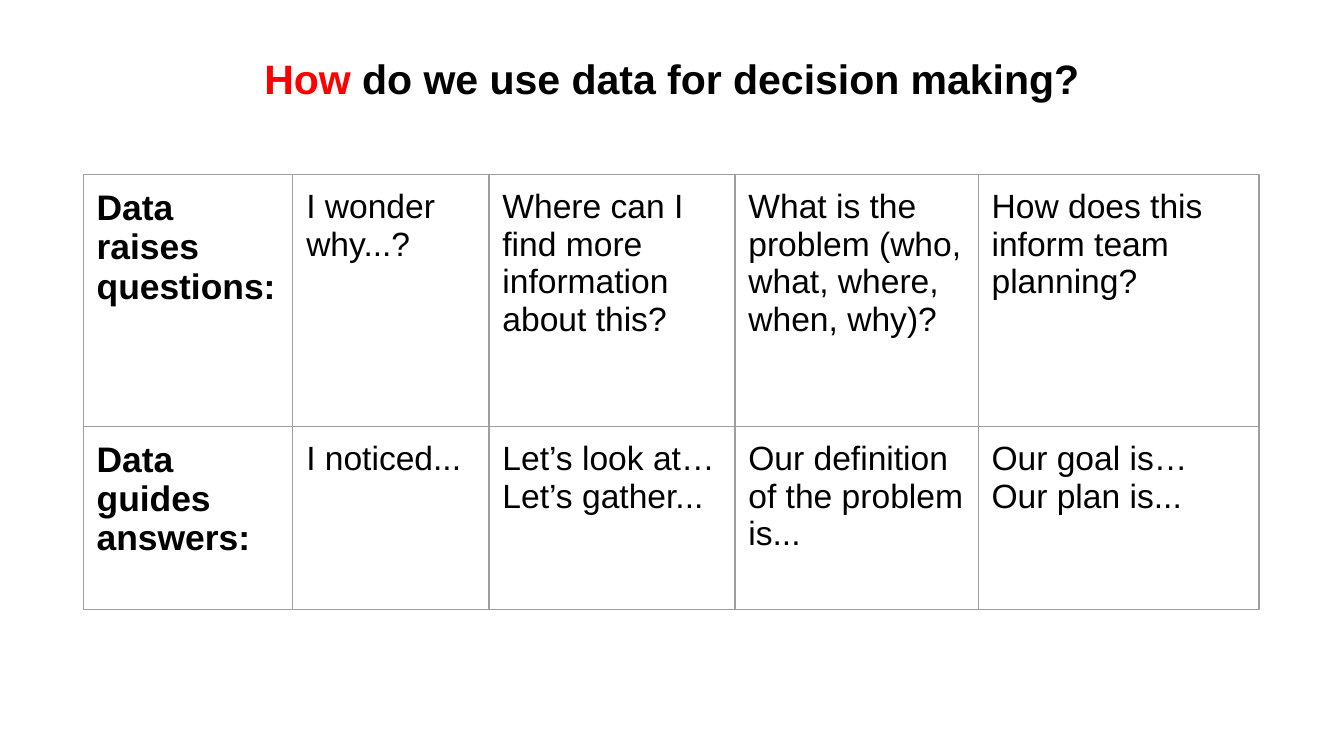
from lxml import etree
from pptx import Presentation
from pptx.dml.color import RGBColor
from pptx.enum import text
from pptx.oxml import ns
from pptx.util import Pt

BLACK = RGBColor(0x00, 0x00, 0x00)
RED = RGBColor(0xFF, 0x00, 0x00)
GREY = RGBColor(0x9E, 0x9E, 0x9E)

COLS = [112.3, 105.1, 131.8, 130.3, 150.5]
ROWS = [135, 98]
CELLS = [
    ["Data raises questions:", "I wonder why...?",
     "Where can I find more information about this?",
     "What is the problem (who, what, where, when, why)?",
     "How does this inform team planning?"],
    ["Data guides answers:", "I noticed...",
     "Let’s look at…\nLet’s gather...",
     "Our definition of the problem is...",
     "Our goal is…\nOur plan is..."],
]


class Deck:
    face = "Arial"
    inset = Pt(7.2)

    def __init__(self, wide, high):
        self.prs = Presentation()
        self.prs.slide_width, self.prs.slide_height = Pt(wide), Pt(high)
        self.slide = self.prs.slides.add_slide(self.prs.slide_layouts[6])

    def font(self, run, size, color=BLACK, bold=False):
        run.font.name = self.face
        run.font.size = Pt(size)
        run.font.bold = bold
        run.font.color.rgb = color

    def pad(self, item):
        item.margin_left = item.margin_right = self.inset
        item.margin_top = item.margin_bottom = self.inset

    def title(self, parts, x, y, w, h, size):
        box = self.slide.shapes.add_textbox(Pt(x), Pt(y), Pt(w), Pt(h))
        frame = box.text_frame
        frame.word_wrap = True
        frame.vertical_anchor = text.MSO_ANCHOR.TOP
        self.pad(frame)
        para = frame.paragraphs[0]
        para.alignment = text.PP_ALIGN.CENTER
        para.line_spacing = 0.9
        for words, color in parts:
            run = para.add_run()
            run.text = words
            self.font(run, size, color, True)

    def border(self, cell, width=0.75):
        props = cell._tc.get_or_add_tcPr()
        for i, side in enumerate(("lnL", "lnR", "lnT", "lnB")):
            line = etree.Element(ns.qn("a:" + side), w=str(Pt(width)))
            fill = etree.SubElement(line, ns.qn("a:solidFill"))
            etree.SubElement(fill, ns.qn("a:srgbClr"), val=str(GREY))
            props.insert(i, line)

    def cell(self, cell, words, size, bold):
        cell.text_frame.text = words
        self.pad(cell)
        cell.fill.background()
        self.border(cell)
        for para in cell.text_frame.paragraphs:
            for run in para.runs:
                self.font(run, size, bold=bold)

    def table(self, rows, x, y, widths, heights):
        grid = self.slide.shapes.add_table(
            len(heights), len(widths), Pt(x), Pt(y),
            Pt(sum(widths)), Pt(sum(heights))).table
        grid.first_row = grid.horz_banding = False
        for col, width in zip(grid.columns, widths):
            col.width = Pt(width)
        for row, height, words in zip(grid.rows, heights, rows):
            row.height = Pt(height)
            for i, (cell, word) in enumerate(zip(row.cells, words)):
                head = i == 0
                self.cell(cell, word, 19 if head else 18, head)


def main():
    deck = Deck(720, 405)

    # Heading
    deck.title([("How", RED), (" do we use data for decision making?", BLACK)],
               24.5, 24.5, 671, 45.4, 22)

    # Questions and answers
    deck.table(CELLS, 44.6, 93.6, COLS, ROWS)

    deck.prs.save("out.pptx")


if __name__ == "__main__":
    main()
